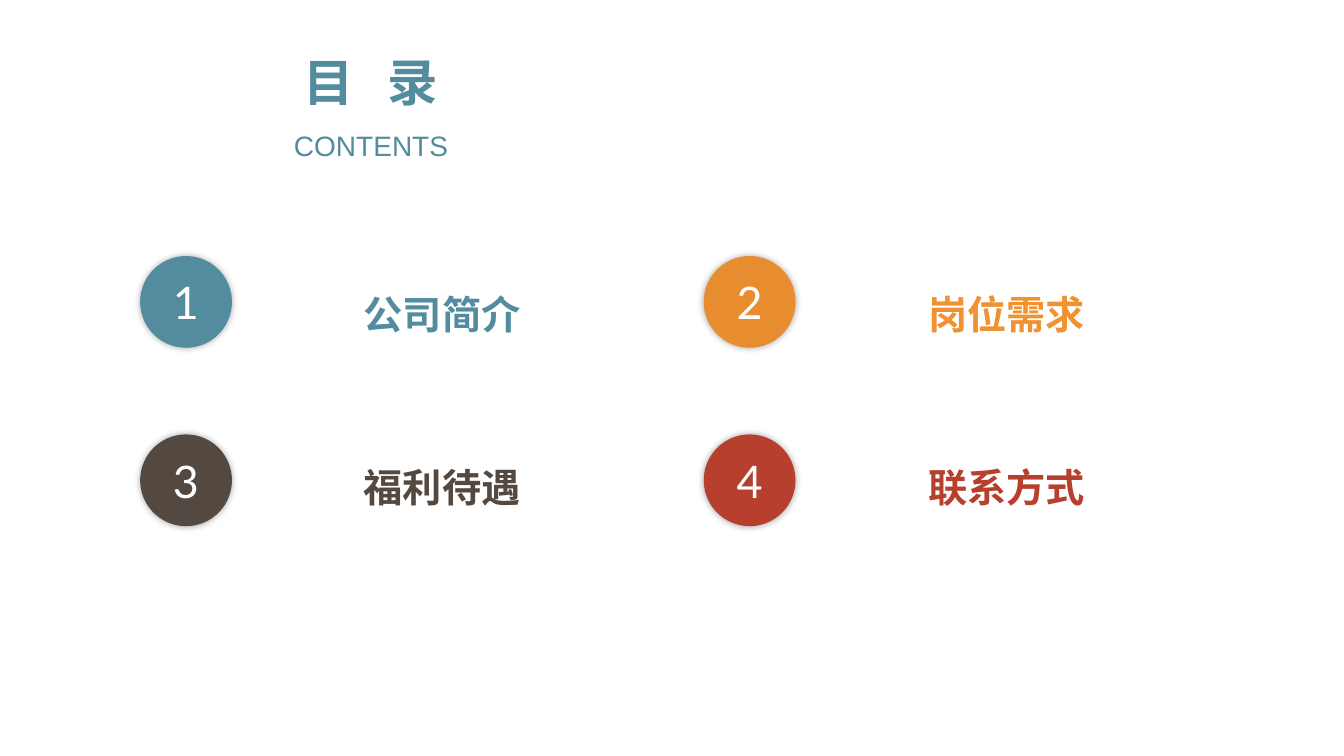
from lxml import etree
from pptx import Presentation
from pptx.dml.color import RGBColor
from pptx.enum.shapes import MSO_SHAPE
from pptx.enum.text import MSO_ANCHOR, MSO_AUTO_SIZE, PP_ALIGN
from pptx.oxml.ns import qn
from pptx.util import Inches, Pt

CENTER = PP_ALIGN.CENTER
TOP, MIDDLE = MSO_ANCHOR.TOP, MSO_ANCHOR.MIDDLE
NO_FIT = MSO_AUTO_SIZE.NONE
OVAL = MSO_SHAPE.OVAL

# Content
TITLE, SUBTITLE = "目 录", "CONTENTS"
SECTIONS = [  # label, circle colour, label colour
    ("公司简介", "teal", "teal"),
    ("岗位需求", "orange", "bright orange"),
    ("福利待遇", "brown", "brown"),
    ("联系方式", "red", "red"),
]
COLORS = {
    "teal": "538C9F",
    "orange": "E88C30",
    "bright orange": "F09132",
    "brown": "534941",
    "red": "B6402D",
    "white": "FFFFFF",
    "black": "000000",
}

# Formats
CJK_FONT = "Noto Sans CJK SC"
TITLE_FORMAT = {"name": CJK_FONT, "size": Pt(36), "bold": True}
SUBTITLE_FORMAT = {"name": "Arial", "size": Pt(20), "bold": False}
LABEL_FORMAT = {"name": "Arial", "size": Pt(28), "bold": True}
NUMBER_FORMAT = {"name": "Lato", "size": Pt(32), "bold": False}

# Grid, in inches
COLUMNS = [(1.39, 2.44), (6.98, 8.04)]  # left of circle, left of label
ROWS = [(2.54, 2.72), (4.31, 4.44)]  # top of circle, top of label
CIRCLE_SIZE = 0.91
LABEL_SIZE = (3.89, 0.68)


def write(para, text, color, font_format, line_spacing):
    para.alignment = CENTER
    para.line_spacing = line_spacing
    para.space_before = Pt(0)
    span = para.add_run()
    span.text = text
    for name, value in font_format.items():
        setattr(span.font, name, value)
    span.font.color.rgb = RGBColor.from_string(COLORS[color])
    etree.SubElement(span.font._element, qn("a:ea"), typeface=CJK_FONT)
    return span


def add_soft_shadow(shape):
    shape.shadow.inherit = False
    effects = shape._element.spPr.find(qn("a:effectLst"))
    shadow = etree.SubElement(effects, qn("a:outerShdw"),
                              blurRad=str(Pt(5)), dist="0", dir="0")
    tint = etree.SubElement(shadow, qn("a:srgbClr"), val=COLORS["black"])
    etree.SubElement(tint, qn("a:alpha"), val="35000")


def add_circle(page, left, top, number, color):
    size = Inches(CIRCLE_SIZE)
    circle = page.shapes.add_shape(OVAL, Inches(left), Inches(top), size, size)
    circle.fill.solid()
    circle.fill.fore_color.rgb = RGBColor.from_string(COLORS[color])
    circle.line.fill.background()
    add_soft_shadow(circle)
    frame = circle.text_frame
    for side in ("left", "top", "right", "bottom"):
        setattr(frame, f"margin_{side}", 0)
    frame.vertical_anchor = MIDDLE
    write(frame.paragraphs[0], str(number), "white", NUMBER_FORMAT, 1.0)


def add_label(page, left, top, text, color):
    width, height = LABEL_SIZE
    box = page.shapes.add_textbox(Inches(left), Inches(top),
                                  Inches(width), Inches(height))
    box.text_frame.word_wrap = True
    write(box.text_frame.paragraphs[0], text, color, LABEL_FORMAT, 1.23)


def add_title(page):
    title = page.shapes.title
    title.left, title.top = Inches(2.14), Inches(0.57)
    title.width, title.height = Inches(3.08), Inches(1.04)
    frame = title.text_frame
    frame.auto_size = NO_FIT
    frame.vertical_anchor = TOP
    heading = write(frame.paragraphs[0], TITLE, "teal", TITLE_FORMAT, Pt(35.4))
    heading.font._element.set("spc", "800")  # wide letter spacing
    write(frame.add_paragraph(), SUBTITLE, "teal", SUBTITLE_FORMAT, Pt(35.4))


def main():
    deck = Presentation()
    deck.slide_width, deck.slide_height = Inches(13.33), Inches(7.5)
    page = deck.slides.add_slide(deck.slide_layouts[5])
    add_title(page)

    # Numbered sections, two per row
    for index, (label, circle_color, label_color) in enumerate(SECTIONS):
        row, column = divmod(index, len(COLUMNS))
        circle_left, label_left = COLUMNS[column]
        circle_top, label_top = ROWS[row]
        add_label(page, label_left, label_top, label, label_color)
        add_circle(page, circle_left, circle_top, index + 1, circle_color)

    deck.save("out.pptx")


if __name__ == "__main__":
    main()
